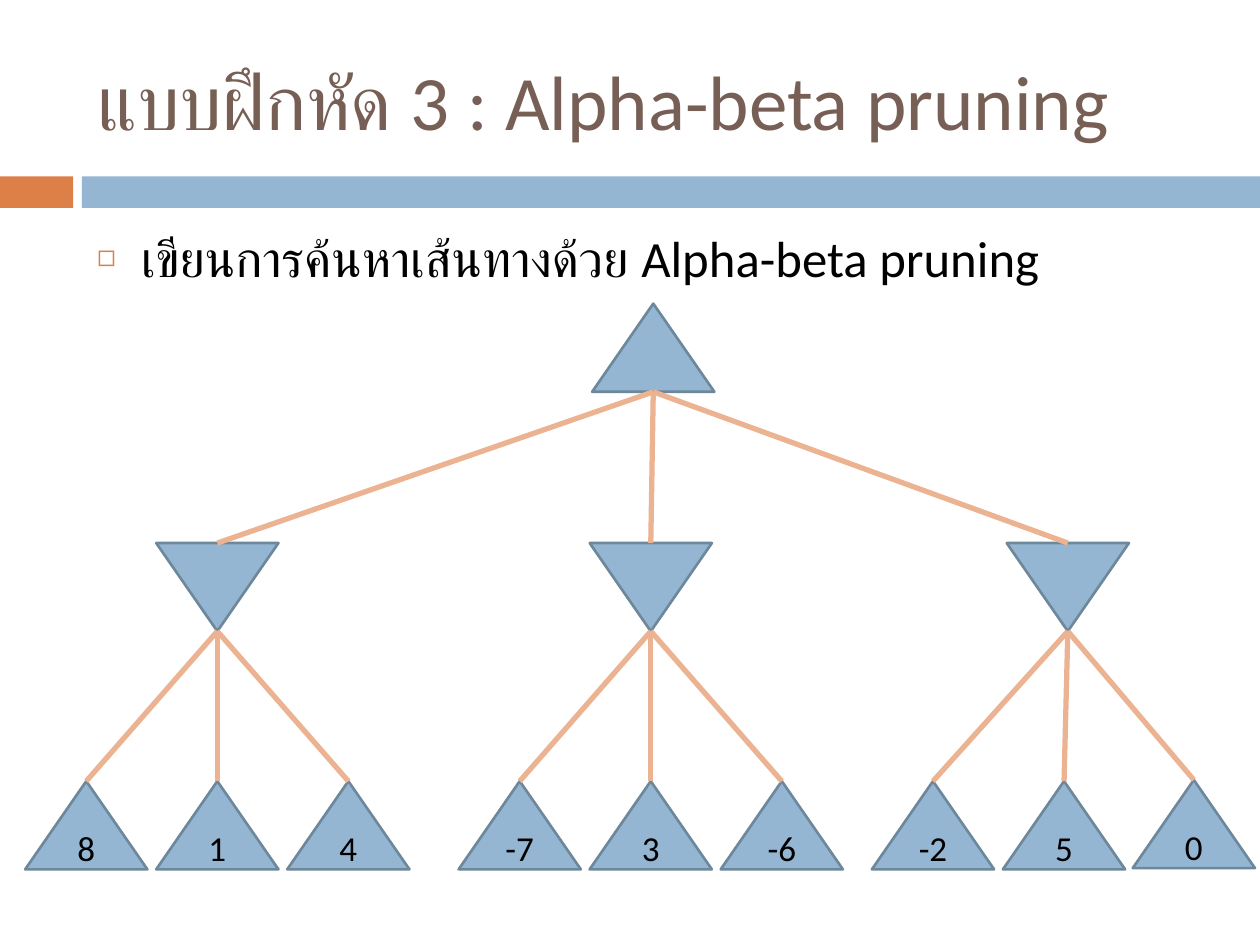
"""Build the alpha-beta pruning exercise slide with its three-level game tree."""
from dataclasses import dataclass

from lxml import etree
from pptx import Presentation
from pptx.dml.color import RGBColor
from pptx.enum import shapes, text
from pptx.oxml import ns
from pptx.util import Inches, Pt

BLUE, ORANGE, BROWN = "94B6D2", "DD8047", "775F55"
OUTLINE, BRANCH, BLACK = "6D879B", "EBB391", "000000"
NODE_WIDTH, NODE_HEIGHT = 0.97, 0.7


@dataclass(frozen=True)
class Node:
    left: float
    top: float
    label: str = ""
    flipped: bool = False

    @property
    def centre(self) -> float:
        return self.left + NODE_WIDTH / 2

    @property
    def bottom(self) -> float:
        return self.top + NODE_HEIGHT


ROOT = Node(4.7, 2.41)
FAMILIES = [
    (Node(1.24, 4.31, flipped=True),
     [Node(0.2, 6.2, "8"), Node(1.24, 6.2, "1"), Node(2.28, 6.2, "4")]),
    (Node(4.68, 4.31, flipped=True),
     [Node(3.64, 6.2, "-7"), Node(4.68, 6.2, "3"), Node(5.72, 6.2, "-6")]),
    (Node(7.99, 4.31, flipped=True),
     [Node(6.92, 6.2, "-2"), Node(7.96, 6.2, "5"), Node(8.99, 6.19, "0")]),
]


def paint(color_format, value: str) -> None:
    color_format.rgb = RGBColor.from_string(value)


def write(frame, words: str, *, size: float, color: str = BLACK,
          align=text.PP_ALIGN.LEFT, anchor=text.MSO_ANCHOR.MIDDLE):
    frame.word_wrap = True
    frame.vertical_anchor = anchor
    para = frame.paragraphs[0]
    para.alignment = align
    span = para.add_run()
    span.text = words
    span.font.name = "Calibri"
    span.font.size = Pt(size)
    paint(span.font.color, color)
    return para


def place(box, left: float, top: float, width: float, height: float) -> None:
    box.left, box.top = Inches(left), Inches(top)
    box.width, box.height = Inches(width), Inches(height)


def set_bullet(para, symbol: str, color: str, percent: int, indent: float) -> None:
    props = para._p.get_or_add_pPr()
    props.set("marL", str(Inches(indent)))
    props.set("indent", str(-Inches(indent)))
    bullet_color = etree.SubElement(props, ns.qn("a:buClr"))
    etree.SubElement(bullet_color, ns.qn("a:srgbClr"), val=color)
    etree.SubElement(props, ns.qn("a:buSzPct"), val=str(percent * 1000))
    etree.SubElement(props, ns.qn("a:buChar"), char=symbol)


def draw_shape(page, kind, left: float, top: float, width: float, height: float, fill: str):
    box = page.shapes.add_shape(kind, Inches(left), Inches(top), Inches(width), Inches(height))
    box.shadow.inherit = False
    box.fill.solid()
    paint(box.fill.fore_color, fill)
    box.line.fill.background()
    return box


def draw_node(page, node: Node) -> None:
    box = draw_shape(page, shapes.MSO_SHAPE.ISOSCELES_TRIANGLE,
                     node.left, node.top, NODE_WIDTH, NODE_HEIGHT, BLUE)
    paint(box.line.color, OUTLINE)
    box.line.width = Pt(1.5)
    if node.flipped:
        box.rotation = 180
    if node.label:
        write(box.text_frame, node.label, size=20, align=text.PP_ALIGN.CENTER)


def draw_branch(page, parent: Node, child: Node) -> None:
    branch = page.shapes.add_connector(
        shapes.MSO_CONNECTOR.STRAIGHT, Inches(parent.centre), Inches(parent.bottom),
        Inches(child.centre), Inches(child.top))
    paint(branch.line.color, BRANCH)
    branch.line.width = Pt(3)
    etree.SubElement(branch._element.spPr, ns.qn("a:effectLst"))


def main() -> None:
    deck = Presentation()
    deck.slide_width, deck.slide_height = Inches(10), Inches(7.5)
    page = deck.slides.add_slide(deck.slide_layouts[1])

    title, body = page.placeholders
    place(title, 0.67, 0.25, 8.92, 1.08)
    write(title.text_frame, "แบบฝึกหัด 3 : Alpha-beta pruning", size=44, color=BROWN)
    place(body, 0.67, 1.75, 8.92, 4.92)
    para = write(body.text_frame, "เขียนการค้นหาเส้นทางด้วย Alpha-beta pruning",
                 size=29, anchor=text.MSO_ANCHOR.TOP)
    para.space_before = Pt(7)
    set_bullet(para, "◻", ORANGE, 60, 0.35)

    for left, width, fill in [(0, 0.58, ORANGE), (0.65, 9.35, BLUE)]:
        draw_shape(page, shapes.MSO_SHAPE.RECTANGLE, left, 1.4, width, 0.25, fill)

    parents = [parent for parent, _ in FAMILIES]
    leaves = [leaf for _, children in FAMILIES for leaf in children]
    for node in [ROOT, *parents, *leaves]:
        draw_node(page, node)
    for parent, children in [(ROOT, parents), *FAMILIES]:
        for child in children:
            draw_branch(page, parent, child)

    deck.save("out.pptx")


if __name__ == "__main__":
    main()
